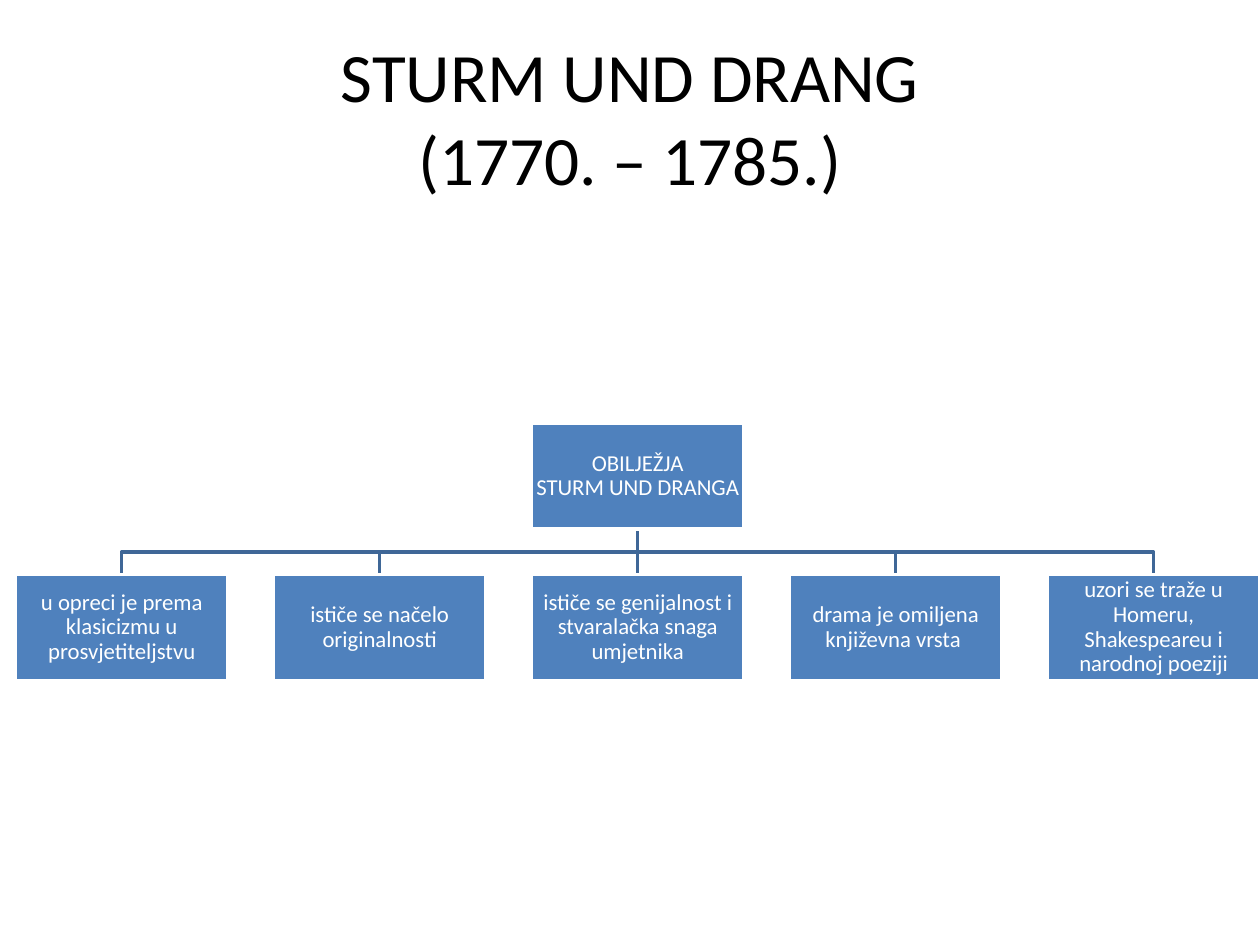
from typing import NamedTuple

import pptx
import pptx.dml.color
import pptx.enum.shapes
import pptx.enum.text
import pptx.oxml
import pptx.util

Inches = pptx.util.Inches
BOX_WIDTH, BOX_HEIGHT = 1.69, 0.84
FIRST_LEFT, LAST_LEFT = 0.12, 8.31
COLUMN_STEP = (LAST_LEFT - FIRST_LEFT) / 4
ROOT_TOP, FEATURE_TOP, BUS_TOP = 3.36, 4.56, 4.38
FRAME_FORMAT = {
    "word_wrap": True,
    "vertical_anchor": pptx.enum.text.MSO_ANCHOR.MIDDLE,
}


class Box(NamedTuple):
    text: str
    column: int
    top: float

    @property
    def left(self) -> float:
        return FIRST_LEFT + self.column * COLUMN_STEP

    @property
    def center(self) -> float:
        return self.left + BOX_WIDTH / 2


ROOT = Box("OBILJEŽJA\vSTURM UND DRANGA", 2, ROOT_TOP)
FEATURES = [
    Box(text, column, FEATURE_TOP)
    for column, text in enumerate([
        "u opreci je prema klasicizmu u prosvjetiteljstvu",
        "ističe se načelo originalnosti",
        "ističe se genijalnost i stvaralačka snaga umjetnika",
        "drama je omiljena književna vrsta ",
        "uzori se traže u Homeru, Shakespeareu i narodnoj poeziji",
    ])
]


def color(value: str) -> pptx.dml.color.RGBColor:
    return pptx.dml.color.RGBColor.from_string(value)


def set_attributes(target, values: dict) -> None:
    for name, value in values.items():
        setattr(target, name, value)


def set_line(shape, line_color: str) -> None:
    shape.line.color.rgb = color(line_color)
    shape.line.width = pptx.util.Pt(2)


def write_text(shape, text: str, size: float, text_color: str, margin: float, spacing: float) -> None:
    frame = shape.text_frame
    set_attributes(frame, FRAME_FORMAT)
    for side in ("left", "top", "right", "bottom"):
        setattr(frame, f"margin_{side}", Inches(margin))
    paragraph = frame.paragraphs[0]
    paragraph.text = text
    set_attributes(paragraph, {
        "alignment": pptx.enum.text.PP_ALIGN.CENTER,
        "line_spacing": spacing,
    })
    for run in paragraph.runs:
        set_attributes(run.font, {"name": "Calibri", "size": pptx.util.Pt(size)})
        run.font.color.rgb = color(text_color)


def draw_box(slide, box: Box):
    shape = slide.shapes.add_shape(
        pptx.enum.shapes.MSO_SHAPE.RECTANGLE,
        Inches(box.left), Inches(box.top), Inches(BOX_WIDTH), Inches(BOX_HEIGHT),
    )
    shape.shadow.inherit = False
    shape.fill.solid()
    shape.fill.fore_color.rgb = color("4F81BD")
    set_line(shape, "FFFFFF")
    write_text(shape, box.text, 13, "FFFFFF", 0.01, 0.9)
    return shape


def draw_stem(slide, root_shape, feature_shape):
    connector = slide.shapes.add_connector(
        pptx.enum.shapes.MSO_CONNECTOR.STRAIGHT, 0, 0, 0, 0
    )
    connector.begin_connect(root_shape, 2)
    connector.end_connect(feature_shape, 0)
    connector._element.spPr.append(pptx.oxml.parse_xml(
        '<a:effectLst xmlns:a="http://schemas.openxmlformats.org/drawingml/2006/main"/>'
    ))
    return connector


def draw_branch(slide, feature: Box):
    points = [
        (Inches(x), Inches(y))
        for x, y in (
            (ROOT.center, ROOT_TOP + BOX_HEIGHT),
            (ROOT.center, BUS_TOP),
            (feature.center, BUS_TOP),
            (feature.center, FEATURE_TOP),
        )
    ]
    builder = slide.shapes.build_freeform(*points[0])
    builder.add_line_segments(points[1:], close=False)
    branch = builder.convert_to_shape()
    branch.shadow.inherit = False
    branch.fill.background()
    return branch


def draw_tree(slide) -> None:
    root_shape = draw_box(slide, ROOT)
    for feature in FEATURES:
        feature_shape = draw_box(slide, feature)
        if feature.column == ROOT.column:
            link = draw_stem(slide, root_shape, feature_shape)
        else:
            link = draw_branch(slide, feature)
        set_line(link, "3F6797")
        root_shape._element.addprevious(link._element)


def main() -> None:
    presentation = pptx.Presentation()
    set_attributes(presentation, {"slide_width": Inches(10), "slide_height": Inches(7.5)})
    slide = presentation.slides.add_slide(presentation.slide_layouts[6])
    title = slide.shapes.add_textbox(Inches(0.5), Inches(0.3), Inches(9), Inches(1.25))
    write_text(title, "STURM UND DRANG\v(1770. – 1785.)", 39.6, "000000", 0.05, 1.0)
    draw_tree(slide)
    presentation.save("out.pptx")


if __name__ == "__main__":
    main()
